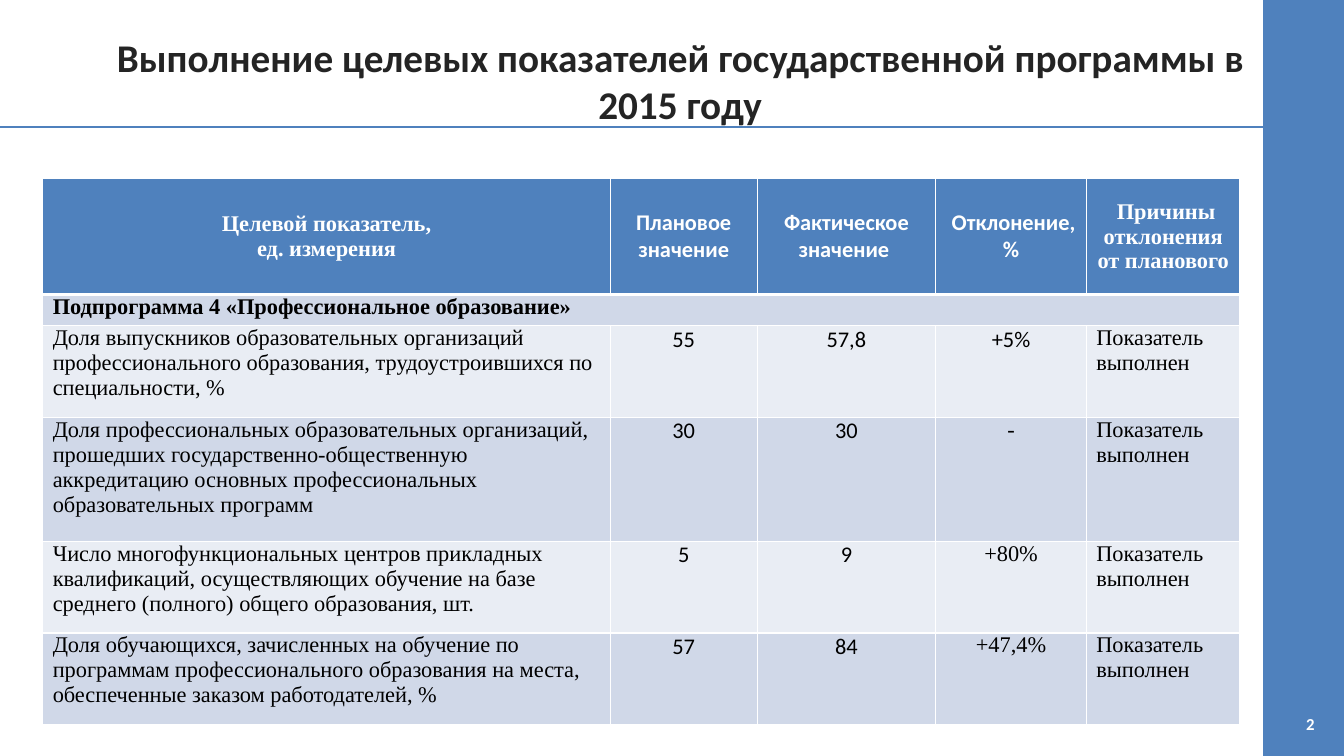
from lxml.etree import SubElement
from pptx import Presentation
from pptx.dml.color import RGBColor
from pptx.enum.shapes import MSO_CONNECTOR as Connector, MSO_SHAPE as Shape
from pptx.enum.text import MSO_ANCHOR as Anchor, MSO_AUTO_SIZE as AutoSize, PP_ALIGN as Align
from pptx.oxml.ns import qn
from pptx.util import Cm, Pt

# Content
TITLE = "Выполнение целевых показателей государственной программы в 2015 году"
PAGE_NUMBER = "2"
SANS, SERIF = "Calibri", "Times New Roman"
HEADER = [
    ("Целевой показатель,\nед. измерения", SERIF),
    (" Плановое \nзначение", SANS),
    ("Фактическое значение ", SANS),
    (" Отклонение, %", SANS),
    (" Причины отклонения от планового ", SERIF),
]
SUBPROGRAMME = "Подпрограмма 4 «Профессиональное образование»"
RESULT = "Показатель выполнен"
# Indicator, planned value, actual value, deviation, font of the deviation
INDICATORS = [
    ("Доля выпускников образовательных организаций профессионального образования, "
     "трудоустроившихся по специальности, %", "55", "57,8", "+5%", SANS),
    ("Доля профессиональных образовательных организаций, прошедших "
     "государственно-общественную аккредитацию основных профессиональных "
     "образовательных программ", "30", "30", "-", SERIF),
    ("Число многофункциональных центров прикладных квалификаций, осуществляющих "
     "обучение на базе среднего (полного) общего образования, шт.",
     "5", "9", "+80%", SERIF),
    ("Доля обучающихся, зачисленных на обучение по программам профессионального "
     "образования на места, обеспеченные заказом работодателей, %",
     "57", "84", "+47,4%", SERIF),
]
COLUMN_WIDTHS = [14.3, 3.7, 4.5, 3.8, 3.87]
ROW_HEIGHTS = [2.92, 0.79, 2.31, 3.12, 2.31, 2.31]

BLUE = RGBColor(0x4F, 0x81, 0xBD)
DARK_BAND = RGBColor(0xD0, 0xD8, 0xE8)
LIGHT_BAND = RGBColor(0xE9, 0xED, 0xF4)
WHITE = RGBColor(0xFF, 0xFF, 0xFF)
BLACK = RGBColor(0, 0, 0)
TITLE_COLOUR = RGBColor(0x24, 0x24, 0x24)


def write(frame, text, font, size, colour, bold, align):
    for index, line in enumerate(text.split("\n")):
        paragraph = frame.add_paragraph() if index else frame.paragraphs[0]
        paragraph.alignment = align
        run = paragraph.add_run()
        run.text = line
        run.font.name = font
        run.font.size = Pt(size)
        run.font.bold = bold
        run.font.color.rgb = colour


def add_borders(cell, bottom_width):
    properties = cell._tc.get_or_add_tcPr()
    for side, width in (("L", 1), ("R", 1), ("T", 1), ("B", bottom_width)):
        line = SubElement(properties, qn(f"a:ln{side}"), w=str(Pt(width)))
        fill = SubElement(line, qn("a:solidFill"))
        SubElement(fill, qn("a:srgbClr"), val=str(WHITE))


presentation = Presentation()
presentation.slide_width, presentation.slide_height = Cm(33.87), Cm(19.05)
slide = presentation.slides.add_slide(presentation.slide_layouts[5])

# Title rule and side band
rule = slide.shapes.add_connector(Connector.STRAIGHT, 0, Cm(3.2), Cm(33.87), Cm(3.2))
rule.line.color.rgb = BLUE
rule.line.width = Pt(0.75)
SubElement(rule._element.spPr, qn("a:effectLst"))

band = slide.shapes.add_shape(Shape.RECTANGLE, Cm(31.83), 0, Cm(2.04), Cm(19.05))
band.shadow.inherit = False
band.fill.solid()
band.fill.fore_color.rgb = BLUE
band.line.fill.background()

# Title
title = slide.shapes.title
title.left, title.top, title.width, title.height = Cm(1.9), Cm(0.64), Cm(30.48), Cm(2.77)
title.text_frame.word_wrap = True
title.text_frame.auto_size = AutoSize.NONE
title.text_frame.vertical_anchor = Anchor.MIDDLE
write(title.text_frame, TITLE, SANS, 28, TITLE_COLOUR, True, Align.CENTER)

# Table grid
table = slide.shapes.add_table(
    len(ROW_HEIGHTS), len(COLUMN_WIDTHS), Cm(1.08), Cm(4.5),
    Cm(sum(COLUMN_WIDTHS)), Cm(sum(ROW_HEIGHTS))).table
for column, width in zip(table.columns, COLUMN_WIDTHS):
    column.width = Cm(width)
for row_index, height in enumerate(ROW_HEIGHTS):
    header = row_index == 0
    table.rows[row_index].height = Cm(height)
    for cell in table.rows[row_index].cells:
        cell.margin_left = cell.margin_right = Cm(0.25)
        cell.margin_top = cell.margin_bottom = 0
        cell.vertical_anchor = Anchor.MIDDLE if header else Anchor.TOP
        add_borders(cell, 3 if header else 1)
        cell.fill.solid()
        cell.fill.fore_color.rgb = (
            BLUE if header else DARK_BAND if row_index % 2 else LIGHT_BAND)
table.cell(1, 0).merge(table.cell(1, len(COLUMN_WIDTHS) - 1))

# Table text
for column_index, (text, font) in enumerate(HEADER):
    write(table.cell(0, column_index).text_frame, text, font, 16, WHITE, True, Align.CENTER)
write(table.cell(1, 0).text_frame, SUBPROGRAMME, SERIF, 16, BLACK, True, Align.JUSTIFY)
for row_index, (name, planned, actual, deviation, font) in enumerate(INDICATORS, 2):
    row = [
        (name, SERIF, Align.LEFT),
        (planned, SANS, Align.CENTER),
        (actual, SANS, Align.CENTER),
        (deviation, font, Align.CENTER),
        (RESULT, SERIF, Align.JUSTIFY),
    ]
    for column_index, (text, cell_font, align) in enumerate(row):
        write(table.cell(row_index, column_index).text_frame,
              text, cell_font, 16, BLACK, False, align)

# Page number
number = slide.shapes.add_textbox(Cm(25.48), Cm(17.73), Cm(7.9), Cm(1.02))
number.text_frame.word_wrap = True
number.text_frame.vertical_anchor = Anchor.MIDDLE
write(number.text_frame, PAGE_NUMBER, SANS, 12, WHITE, True, Align.RIGHT)

presentation.save("out.pptx")
